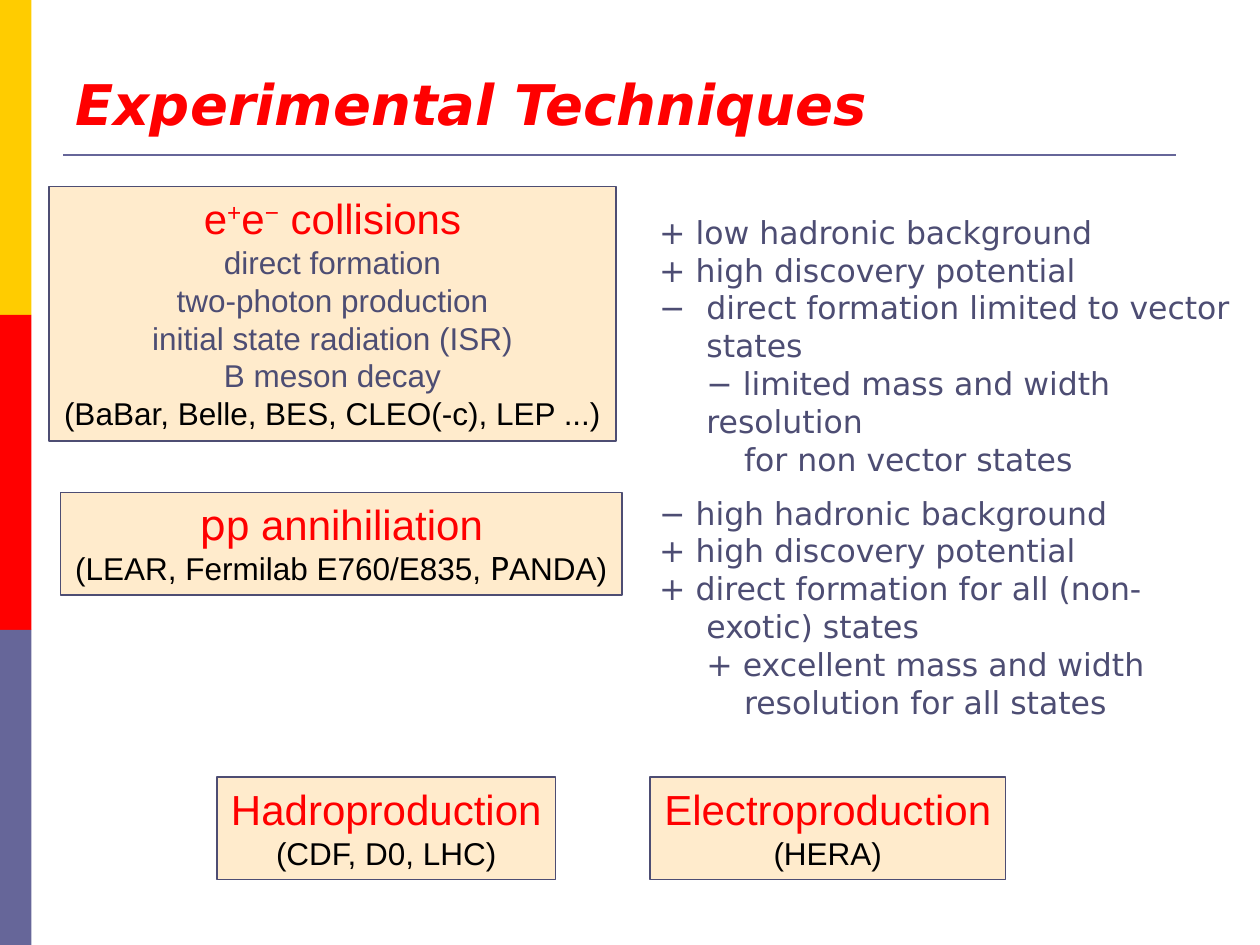
from lxml.etree import SubElement
from pptx import Presentation
from pptx.dml.color import RGBColor
from pptx.enum.shapes import MSO_CONNECTOR, MSO_SHAPE
from pptx.enum.text import MSO_ANCHOR, MSO_AUTO_SIZE, PP_ALIGN
from pptx.oxml.ns import qn
from pptx.util import Pt

YELLOW = RGBColor(0xFF, 0xCC, 0x00)
RED = RGBColor(0xFF, 0x00, 0x00)
VIOLET = RGBColor(0x66, 0x66, 0x99)
SLATE = RGBColor(0x4D, 0x4D, 0x73)
CREAM = RGBColor(0xFF, 0xEB, 0xCC)
BLACK = RGBColor(0x00, 0x00, 0x00)

SANS = "Arial"
WIDE = "DejaVu Sans"
SUPERSCRIPT = 30000

# Left margin and first-line indent of each list level, in points
HANGING = (27, -27)
NESTED = (27, 0)
CONTINUED = (48.5, 0)

EE_CARD = [
    ([("e", SANS), ("+", SANS, SUPERSCRIPT), ("e", SANS),
      ("−", SANS, SUPERSCRIPT), (" collisions", SANS)], 24, RED),
    ([("direct formation", SANS)], 18, SLATE),
    ([("two-photon production", SANS)], 18, SLATE),
    ([("initial state radiation (ISR)", SANS)], 18, SLATE),
    ([("B meson decay", SANS)], 18, SLATE),
    ([("(BaBar, Belle, BES, CLEO(-c), LEP ...)", SANS)], 18, BLACK),
]
PP_CARD = [
    ([("p", WIDE), ("p annihiliation", SANS)], 24, RED),
    ([("(LEAR, Fermilab E760/E835, ", SANS), ("P", WIDE), ("ANDA)", SANS)],
     18, BLACK),
]
HADRO_CARD = [
    ([("Hadroproduction", SANS)], 24, RED),
    ([("(CDF, D0, LHC)", SANS)], 18, BLACK),
]
ELECTRO_CARD = [
    ([("Electroproduction", SANS)], 24, RED),
    ([("(HERA)", SANS)], 18, BLACK),
]
EE_POINTS = [
    ("+ low hadronic background", HANGING),
    ("+ high discovery potential", HANGING),
    ("−\tdirect formation limited to vector states", HANGING),
    ("− limited mass and width resolution", NESTED),
    ("for non vector states", CONTINUED),
]
PP_POINTS = [
    ("− high hadronic background", HANGING),
    ("+ high discovery potential", HANGING),
    ("+ direct formation for all (non-exotic) states", HANGING),
    ("+ excellent mass and width", NESTED),
    ("resolution for all states", CONTINUED),
]


def place(sp, left, top, width, height):
    sp.left, sp.top = Pt(left), Pt(top)
    sp.width, sp.height = Pt(width), Pt(height)


def style(font, name, size, color):
    font.name = name
    font.size = Pt(size)
    font.color.rgb = color


def add_box(slide, left, top, width, height, fill):
    sp = slide.shapes.add_shape(
        MSO_SHAPE.RECTANGLE, Pt(left), Pt(top), Pt(width), Pt(height))
    sp.shadow.inherit = False
    sp.fill.solid()
    sp.fill.fore_color.rgb = fill
    sp.line.fill.background()
    return sp


def add_side_bands(slide):
    for i, color in enumerate((YELLOW, RED, VIOLET)):
        add_box(slide, 0, i * 180, 18, 180, color)


def add_rule(slide):
    line = slide.shapes.add_connector(
        MSO_CONNECTOR.STRAIGHT, Pt(36), Pt(88.5), Pt(672), Pt(88.5))
    line.line.color.rgb = VIOLET
    line.line.width = Pt(1.5)
    SubElement(line._element.spPr, qn("a:effectLst"))


def set_title(slide, text):
    sp = slide.shapes.title
    place(sp, 36, -8, 648, 90)
    tf = sp.text_frame
    tf.text = text
    tf.auto_size = MSO_AUTO_SIZE.NONE
    tf.vertical_anchor = MSO_ANCHOR.BOTTOM
    p = tf.paragraphs[0]
    p.alignment = PP_ALIGN.LEFT
    font = p.runs[0].font
    style(font, WIDE, 32, RED)
    font.bold = font.italic = True


def add_card(slide, left, top, width, height, lines):
    """Add an outlined box; each line is (runs, size, colour)."""
    sp = add_box(slide, left, top, width, height, CREAM)
    sp.line.color.rgb = SLATE
    sp.line.width = Pt(0.75)
    tf = sp.text_frame
    tf.word_wrap = False
    tf.auto_size = MSO_AUTO_SIZE.SHAPE_TO_FIT_TEXT
    tf.vertical_anchor = MSO_ANCHOR.TOP
    for i, (runs, size, color) in enumerate(lines):
        p = tf.add_paragraph() if i else tf.paragraphs[0]
        p.alignment = PP_ALIGN.CENTER
        for text, name, *baseline in runs:
            r = p.add_run()
            r.text = text
            style(r.font, name, size, color)
            if baseline:
                r._r.get_or_add_rPr().set("baseline", str(baseline[0]))


def fill_points(sp, top, points):
    """Fill a body placeholder with pros and cons; each is (text, level)."""
    place(sp, 369.5, top, 350.5, 138)
    tf = sp.text_frame
    tf.word_wrap = True
    tf.auto_size = MSO_AUTO_SIZE.NONE
    tf.vertical_anchor = MSO_ANCHOR.TOP
    for i, (text, (margin, indent)) in enumerate(points):
        p = tf.add_paragraph() if i else tf.paragraphs[0]
        p.text = text
        pPr = p._p.get_or_add_pPr()
        pPr.set("marL", str(Pt(margin)))
        pPr.set("indent", str(Pt(indent)))
        SubElement(pPr, qn("a:buNone"))
        p.space_before = Pt(0)
        style(p.runs[0].font, WIDE, 18, SLATE)


def main():
    prs = Presentation()
    prs.slide_width, prs.slide_height = Pt(720), Pt(540)
    slide = prs.slides.add_slide(prs.slide_layouts[3])
    add_side_bands(slide)
    add_rule(slide)
    set_title(slide, "Experimental Techniques")
    add_card(slide, 28, 106.5, 324, 145.5, EE_CARD)
    fill_points(slide.placeholders[1], 118, EE_POINTS)
    add_card(slide, 34.5, 281.5, 321, 58.5, PP_CARD)
    fill_points(slide.placeholders[2], 278.5, PP_POINTS)
    add_card(slide, 124, 444, 193.5, 58.5, HADRO_CARD)
    add_card(slide, 371.5, 444, 203, 58.5, ELECTRO_CARD)
    prs.save("out.pptx")


if __name__ == "__main__":
    main()
